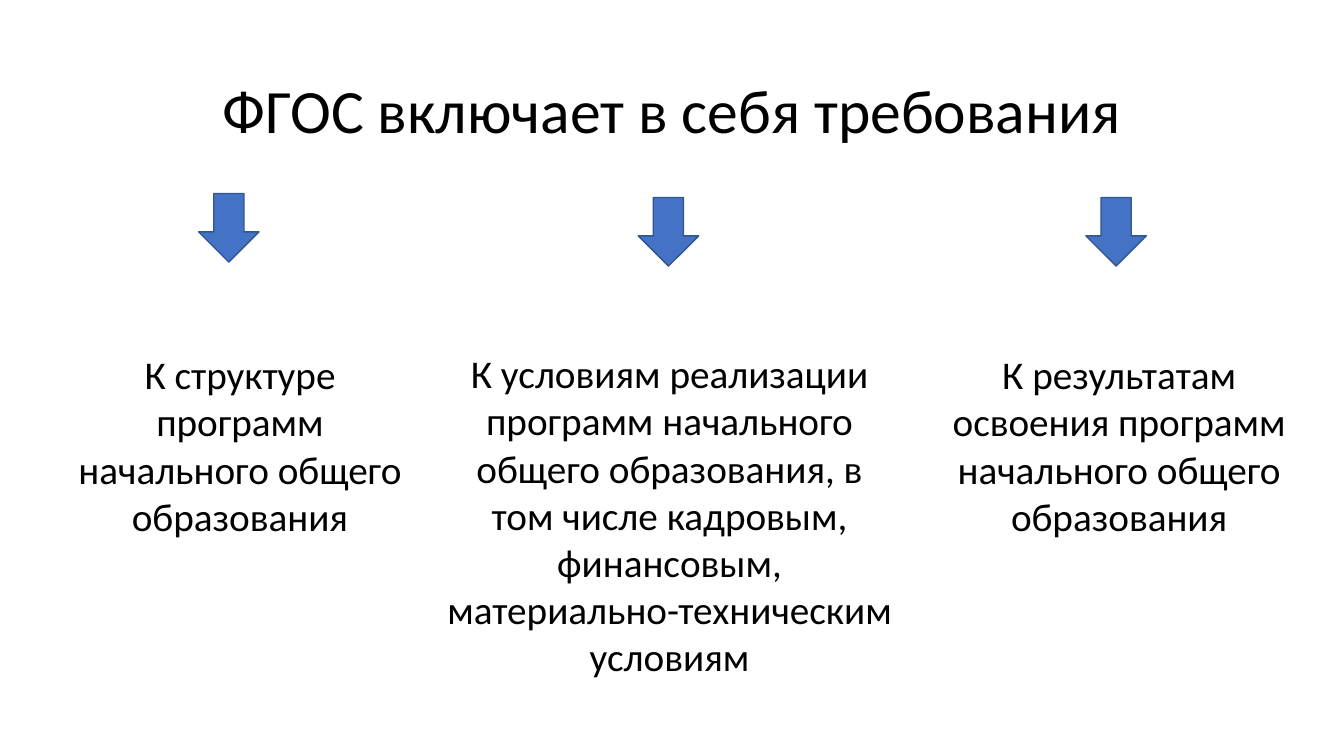
from dataclasses import dataclass

from pptx import Presentation
from pptx.dml.color import RGBColor
from pptx.enum.shapes import MSO_SHAPE as Shape
from pptx.enum.text import MSO_ANCHOR as Anchor, MSO_AUTO_SIZE as AutoSize, PP_ALIGN as Align
from pptx.util import Inches, Pt

TITLE = "ФГОС включает в себя требования"
REQUIREMENTS = [
    {"text": "К структуре программ начального общего образования",
     "box": (0.49, 3.43, 3.78, 1.99), "arrow": (1.97, 1.92)},
    {"text": "К условиям реализации программ начального общего образования, "
             "в том числе кадровым, финансовым, материально-техническим условиям",
     "box": (4.28, 3.42, 4.72, 3.4), "arrow": (6.33, 1.96)},
    {"text": "К результатам освоения программ начального общего образования",
     "box": (9.3, 3.43, 3.6, 1.99), "arrow": (10.77, 1.96)},
]
TITLE_BOX = (0.92, 0.4, 11.5, 1.45)
ARROW_SIZE = (0.6, 0.68)


@dataclass(frozen=True)
class Theme:
    font: str = "Calibri"
    title_size: int = 44
    body_size: int = 28
    text: str = "000000"
    arrow_fill: str = "4472C4"
    arrow_line: str = "325491"
    line_width: int = 1


theme = Theme()


def lengths(values):
    return [Inches(value) for value in values]


def write(frame, text, size):
    frame.word_wrap = True
    paragraph = frame.paragraphs[0]
    paragraph.alignment = Align.CENTER
    run = paragraph.add_run()
    run.text = text
    run.font.name = theme.font
    run.font.size = Pt(size)
    run.font.color.rgb = RGBColor.from_string(theme.text)
    return paragraph


def add_title(slide):
    title = slide.shapes.title
    title.left, title.top, title.width, title.height = lengths(TITLE_BOX)
    frame = title.text_frame
    frame.auto_size = AutoSize.NONE
    frame.vertical_anchor = Anchor.MIDDLE
    write(frame, TITLE, theme.title_size).line_spacing = 0.9


def add_requirement(slide, box, text):
    frame = slide.shapes.add_textbox(*lengths(box)).text_frame
    frame.auto_size = AutoSize.SHAPE_TO_FIT_TEXT
    write(frame, text, theme.body_size)


def add_arrow(slide, position):
    shape = slide.shapes.add_shape(Shape.DOWN_ARROW, *lengths(position + ARROW_SIZE))
    shape.shadow.inherit = False
    shape.fill.solid()
    shape.fill.fore_color.rgb = RGBColor.from_string(theme.arrow_fill)
    shape.line.color.rgb = RGBColor.from_string(theme.arrow_line)
    shape.line.width = Pt(theme.line_width)


def main():
    presentation = Presentation()
    presentation.slide_width, presentation.slide_height = lengths((13.33, 7.5))
    slide = presentation.slides.add_slide(presentation.slide_layouts[5])
    add_title(slide)
    for requirement in REQUIREMENTS:
        add_requirement(slide, requirement["box"], requirement["text"])
    for requirement in REQUIREMENTS:
        add_arrow(slide, requirement["arrow"])
    presentation.save("out.pptx")


if __name__ == "__main__":
    main()
